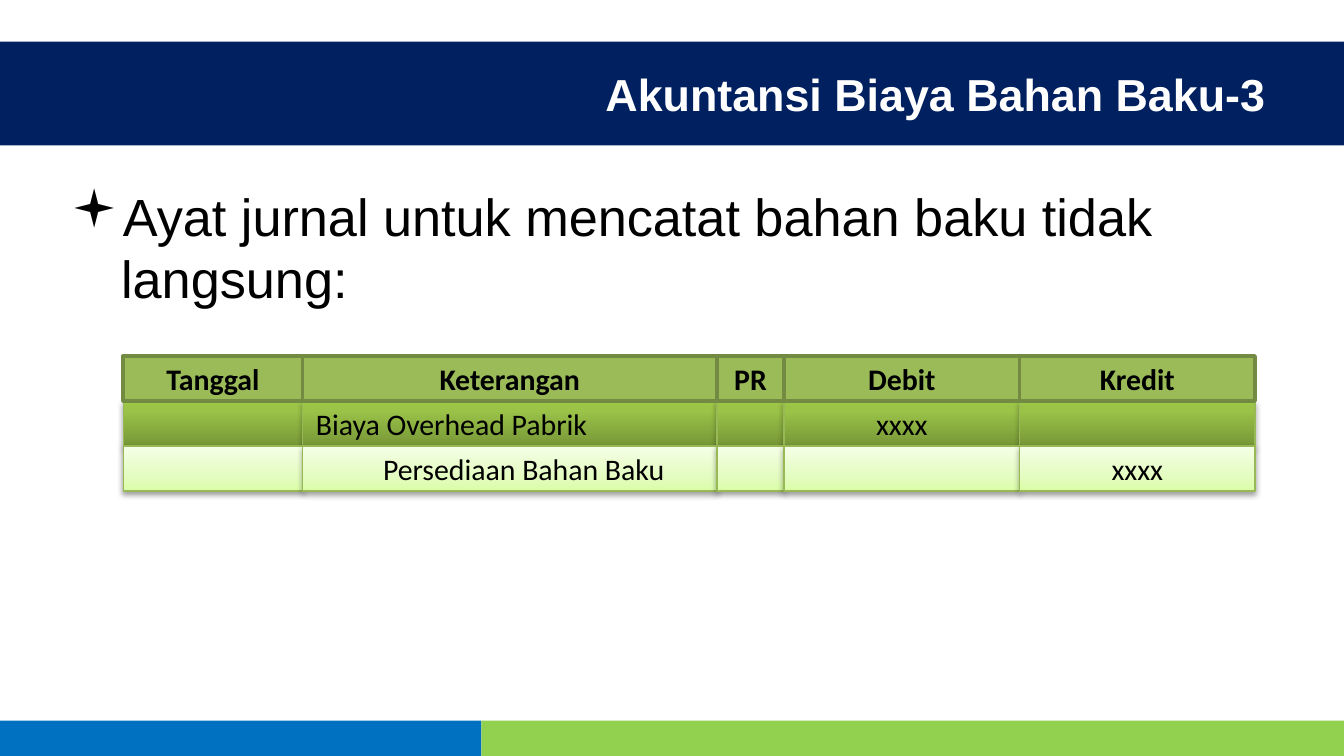
import pptx
import pptx.dml.color
import pptx.enum.shapes
import pptx.enum.text
import pptx.oxml
import pptx.oxml.ns
import pptx.util

Cm = pptx.util.Cm
Pt = pptx.util.Pt
Align = pptx.enum.text.PP_ALIGN
Anchor = pptx.enum.text.MSO_ANCHOR
color = pptx.dml.color.RGBColor.from_string
NAMESPACE = pptx.oxml.ns.nsdecls("a")


def add_box(left, top, width, height, fill):
    """Add a plain rectangle without line or shadow, in centimetres."""
    box = page.shapes.add_shape(
        pptx.enum.shapes.MSO_SHAPE.RECTANGLE, Cm(left), Cm(top), Cm(width), Cm(height))
    box.shadow.inherit = False
    box.fill.solid()
    box.fill.fore_color.rgb = color(fill)
    box.line.fill.background()
    return box


def write_text(box, text, font="Calibri", size=16, fill="000000", bold=False,
               align=Align.CENTER, anchor=Anchor.MIDDLE, indent=0, hanging=0, bullet=None):
    frame = box.text_frame
    frame.word_wrap = True
    frame.vertical_anchor = anchor
    para = frame.paragraphs[0]
    para.alignment = align
    properties = para._p.get_or_add_pPr()
    properties.set("marL", str(Cm(indent)))
    properties.set("indent", str(-Cm(hanging)))
    if bullet:
        for element in ('buFont {} typeface="Wingdings"', f'buChar {{}} char="{bullet}"'):
            properties.append(pptx.oxml.parse_xml(f"<a:{element.format(NAMESPACE)}/>"))
    span = para.add_run()
    span.text = text
    span.font.name = font
    span.font.size = Pt(size)
    span.font.bold = bold
    span.font.color.rgb = color(fill)


deck = pptx.Presentation()
deck.slide_width, deck.slide_height = Cm(25.4), Cm(14.29)
page = deck.slides.add_slide(deck.slide_layouts[6])

# Footer stripes and title band
add_box(0, 13.62, 9.1, 0.67, "0070C0")
add_box(9.1, 13.62, 16.3, 0.67, "92D050")
add_box(0, 0.79, 25.4, 1.96, "002060")

title = page.shapes.add_textbox(Cm(4.22), Cm(0.79), Cm(19.94), Cm(1.96))
write_text(title, "Akuntansi Biaya Bahan Baku-3", font="Arial", size=24,
           fill="FFFFFF", bold=True, align=Align.RIGHT)

body = page.shapes.add_textbox(Cm(1.09), Cm(3.35), Cm(23.67), Cm(6.12))
write_text(body, "Ayat jurnal untuk mencatat bahan baku tidak langsung:", font="Arial",
           size=28, align=Align.LEFT, anchor=Anchor.TOP, indent=0.95, hanging=0.95, bullet="▪")

# Journal: the header is drawn last so that its border lies over the entries
TABLE_LEFT, TABLE_TOP, ROW_HEIGHT = 2.33, 6.73, 0.85
column_widths = [3.39, 7.83, 1.27, 4.45, 4.45]
debit_style = dict(stops=[(0, "779737"), (80, "9BC348"), (100, "9DC746")],
                   shadow_alpha=35, shadow_distance=1.8)
credit_style = dict(stops=[(0, "DAFDA7"), (35, "E4FCC2"), (100, "F5FFE7")],
                    shadow_alpha=38, shadow_distance=1.6)
journal_rows = [
    (1, ["", "Biaya Overhead Pabrik", "", "xxxx", ""], debit_style, dict(align=Align.JUSTIFY)),
    (2, ["", "Persediaan Bahan Baku", "", "", "xxxx"], credit_style,
     dict(align=Align.LEFT, indent=1.27)),
    (0, ["Tanggal", "Keterangan", "PR", "Debit", "Kredit"], None, {}),
]

for row, texts, style, description_format in journal_rows:
    for column, (text, width) in enumerate(zip(texts, column_widths)):
        left = TABLE_LEFT + sum(column_widths[:column])
        cell = add_box(left, TABLE_TOP + row * ROW_HEIGHT, width, ROW_HEIGHT, "9BBB59")
        cell.line.color.rgb = color("98B955" if style else "738A42")
        cell.line.width = Pt(0.75 if style else 2)
        if style:
            properties = cell._element.spPr
            stops = "".join(
                f'<a:gs pos="{place * 1000}"><a:srgbClr val="{shade}"/></a:gs>'
                for place, shade in style["stops"])
            properties.replace(
                properties.find(pptx.oxml.ns.qn("a:solidFill")),
                pptx.oxml.parse_xml(
                    f'<a:gradFill {NAMESPACE} rotWithShape="1"><a:gsLst>{stops}</a:gsLst>'
                    '<a:lin ang="16200000" scaled="0"/></a:gradFill>'))
            properties.find(pptx.oxml.ns.qn("a:effectLst")).append(pptx.oxml.parse_xml(
                f'<a:outerShdw {NAMESPACE} blurRad="{Pt(3.1)}" '
                f'dist="{Pt(style["shadow_distance"])}" dir="5400000" rotWithShape="0">'
                f'<a:srgbClr val="000000"><a:alpha val="{style["shadow_alpha"] * 1000}"/>'
                '</a:srgbClr></a:outerShdw>'))
        if text:
            text_format = description_format if column == 1 else {}
            write_text(cell, text, bold=style is None, **text_format)

deck.save("out.pptx")
